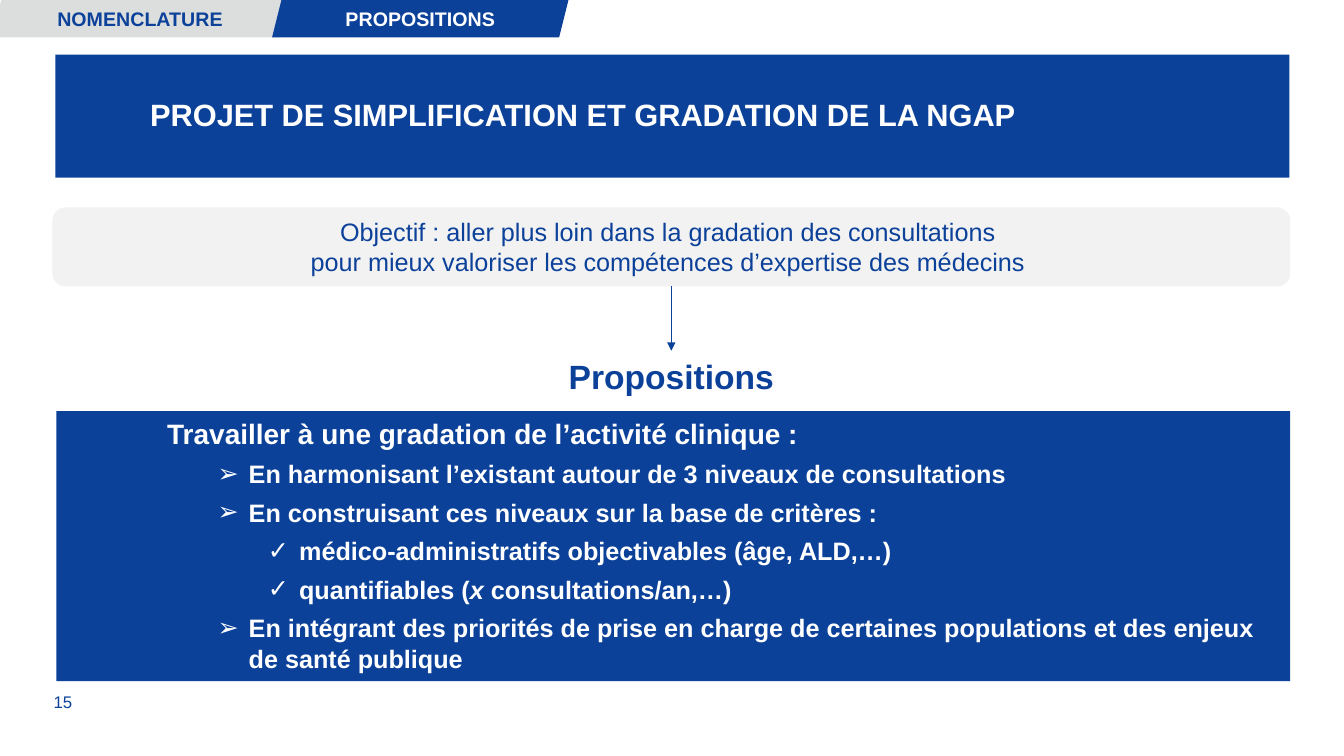
import dataclasses

import lxml.etree
import pptx
import pptx.dml.color
import pptx.enum.shapes
import pptx.enum.text
import pptx.oxml.ns
import pptx.util

SHAPES = pptx.enum.shapes.MSO_SHAPE
ALIGN = pptx.enum.text.PP_ALIGN
ANCHOR = pptx.enum.text.MSO_ANCHOR
AUTO_SIZE = pptx.enum.text.MSO_AUTO_SIZE
COLUMNS, ROWS = 160, 90
CELL = pptx.util.Inches(1 / 12)


@dataclasses.dataclass(frozen=True)
class Theme:
    font: str = "Arial"
    blue: str = "0C419A"
    white: str = "FFFFFF"
    tab_grey: str = "DCDEDE"
    panel_grey: str = "F2F2F2"
    number: int = 12
    tab: int = 14
    text: int = 18
    lead: int = 20
    title: int = 22
    heading: int = 24


@dataclasses.dataclass(frozen=True)
class Box:
    """Area measured in grid columns and rows."""
    left: float
    top: float
    width: float
    height: float

    def inner(self, left, top, width, height):
        return Box(self.left + left, self.top + top, width, height)

    def lengths(self):
        return [round(value * CELL) for value in
                (self.left, self.top, self.width, self.height)]


THEME = Theme()


def rgb(code):
    return pptx.dml.color.RGBColor.from_string(code)


def apply(target, formats):
    for name, value in formats.items():
        setattr(target, name, value)


def add_run(paragraph, text, size, color, bold=False, italic=False):
    run = paragraph.add_run()
    run.text = text
    apply(run.font, {"name": THEME.font, "size": pptx.util.Pt(size),
                     "bold": bold, "italic": italic})
    run.font.color.rgb = rgb(color)


def add_panel(slide, box, kind, fill, anchor=ANCHOR.MIDDLE, **frame):
    shape = slide.shapes.add_shape(kind, *box.lengths())
    shape.shadow.inherit = False
    shape.fill.solid()
    shape.fill.fore_color.rgb = rgb(fill)
    shape.line.fill.background()
    apply(shape.text_frame, {"word_wrap": True, "vertical_anchor": anchor, **frame})
    return shape


def add_label(slide, box, **frame):
    label = slide.shapes.add_textbox(*box.lengths())
    apply(label.text_frame, {"word_wrap": True, **frame})
    return label


def add_tabs(slide, box):
    tabs = [("NOMENCLATURE", THEME.tab_grey, THEME.blue),
            ("PROPOSITIONS", THEME.blue, THEME.white)]
    step = 33.36
    for index, (text, fill, color) in enumerate(tabs):
        tab_box = box.inner(index * step, 0, box.width - step, box.height)
        tab = add_panel(slide, tab_box, SHAPES.PARALLELOGRAM, fill)
        paragraph = tab.text_frame.paragraphs[0]
        paragraph.alignment = ALIGN.CENTER
        add_run(paragraph, text, THEME.tab, color, bold=True)


def add_title(slide, box):
    title = slide.shapes.title
    apply(title, dict(zip(("left", "top", "width", "height"), box.lengths())))
    title.fill.solid()
    title.fill.fore_color.rgb = rgb(THEME.blue)
    margin = pptx.util.Inches(0.08)
    apply(title.text_frame, {
        "word_wrap": True, "auto_size": AUTO_SIZE.NONE,
        "vertical_anchor": ANCHOR.MIDDLE,
        "margin_left": pptx.util.Inches(0.94), "margin_right": margin,
        "margin_top": margin, "margin_bottom": margin})
    paragraph = title.text_frame.paragraphs[0]
    apply(paragraph, {"alignment": ALIGN.LEFT, "line_spacing": 0.9})
    add_run(paragraph, "PROJET DE SIMPLIFICATION ET GRADATION DE LA NGAP",
            THEME.title, THEME.white, bold=True)


def add_objective(slide, box):
    panel = add_panel(slide, box, SHAPES.ROUNDED_RECTANGLE, THEME.panel_grey,
                      ANCHOR.TOP, auto_size=AUTO_SIZE.SHAPE_TO_FIT_TEXT)
    paragraph = panel.text_frame.paragraphs[0]
    paragraph.alignment = ALIGN.CENTER
    add_run(paragraph, "Objectif : aller plus loin dans la gradation des consultations ",
            THEME.text, THEME.blue)
    paragraph.add_line_break()
    add_run(paragraph, "pour mieux valoriser les compétences d’expertise des médecins ",
            THEME.text, THEME.blue)
    return panel


def add_heading(slide, box):
    heading = add_label(slide, box, auto_size=AUTO_SIZE.SHAPE_TO_FIT_TEXT)
    paragraph = heading.text_frame.paragraphs[0]
    paragraph.alignment = ALIGN.CENTER
    add_run(paragraph, "Propositions", THEME.heading, THEME.blue, bold=True)
    return heading


def add_arrow(slide, start, end):
    arrow = slide.shapes.add_connector(
        pptx.enum.shapes.MSO_CONNECTOR.STRAIGHT, 0, 0, 0, 0)
    arrow.begin_connect(start, 2)
    arrow.end_connect(end, 0)
    arrow.line.color.rgb = rgb(THEME.blue)
    arrow.line.width = pptx.util.Pt(0.5)
    qn = pptx.oxml.ns.qn
    properties = arrow._element.spPr
    lxml.etree.SubElement(properties.find(qn("a:ln")), qn("a:tailEnd"), type="triangle")
    lxml.etree.SubElement(properties, qn("a:effectLst"))


def set_indent(paragraph, margin, hanging=0.0, bullet=None):
    properties = paragraph._p.get_or_add_pPr()
    properties.set("marL", str(pptx.util.Inches(margin)))
    properties.set("indent", str(-pptx.util.Inches(hanging)))
    if bullet:
        qn = pptx.oxml.ns.qn
        lxml.etree.SubElement(properties, qn("a:buFont"), typeface=THEME.font)
        lxml.etree.SubElement(properties, qn("a:buChar"), char=bullet)


def add_proposals(slide, box):
    # Level: left margin, hanging indent, bullet, text size
    levels = {2: (1, 0, None, THEME.lead),
              3: (1.81, 0.31, "➢", THEME.text),
              4: (2.31, 0.31, "✓", THEME.text)}
    # Every second piece of a line is italic
    lines = [
        (2, ["Travailler à une gradation de l’activité clinique :"]),
        (3, ["En harmonisant l’existant autour de 3 niveaux de consultations"]),
        (3, ["En construisant ces niveaux sur la base de critères :"]),
        (4, ["médico-administratifs objectivables (âge, ALD,…)"]),
        (4, ["quantifiables (", "x", " consultations/an,…)"]),
        (3, ["En intégrant des priorités de prise en charge de certaines "
             "populations et des enjeux de santé publique"]),
    ]
    panel = add_panel(slide, box, SHAPES.RECTANGLE, THEME.blue, ANCHOR.TOP,
                      auto_size=AUTO_SIZE.SHAPE_TO_FIT_TEXT)
    frame = panel.text_frame
    for index, (level, pieces) in enumerate(lines):
        paragraph = frame.add_paragraph() if index else frame.paragraphs[0]
        margin, hanging, bullet, size = levels[level]
        set_indent(paragraph, margin, hanging, bullet)
        apply(paragraph, {"level": level, "alignment": ALIGN.LEFT,
                          "space_after": pptx.util.Pt(6)})
        for order, piece in enumerate(pieces):
            add_run(paragraph, piece, size, THEME.white, bold=True,
                    italic=order % 2 == 1)


def add_content(slide, box):
    heading_width = 81
    objective = add_objective(slide, box.inner(0, 0, box.width, 9.4))
    heading = add_heading(slide, box.inner((box.width - heading_width) / 2, 17.05,
                                           heading_width, 6))
    add_arrow(slide, objective, heading)
    add_proposals(slide, box.inner(0.48, 24.25, box.width - 0.48, box.height - 24.25))


def add_page_number(slide, box):
    label = add_label(slide, box, vertical_anchor=ANCHOR.MIDDLE)
    add_run(label.text_frame.paragraphs[0], "15", THEME.number, THEME.blue)


def main():
    presentation = pptx.Presentation()
    presentation.slide_width = COLUMNS * CELL
    presentation.slide_height = ROWS * CELL
    slide = presentation.slides.add_slide(presentation.slide_layouts[5])
    add_page_number(slide, Box(5.2, 81.7, 9.5, 3.7))
    add_title(slide, Box(6.6, 6.5, 146.9, 14.65))
    add_tabs(slide, Box(-0.96, 0, 68.64, 4.44))
    add_content(slide, Box(6.24, 24.7, 147.36, 56.4))
    presentation.save("out.pptx")


if __name__ == "__main__":
    main()
